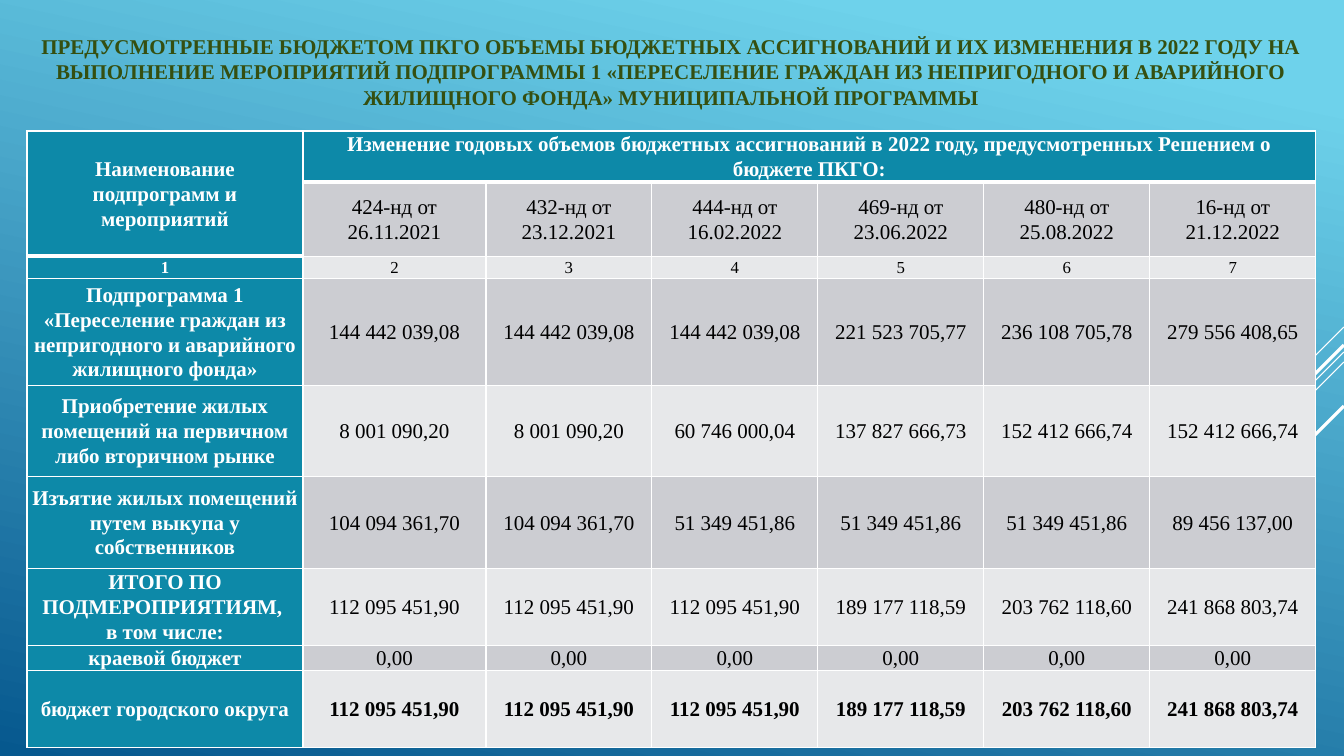
import pptx
import pptx.dml.color
import pptx.enum.shapes
import pptx.enum.text
import pptx.oxml
import pptx.oxml.ns
import pptx.util

PX = 914400 / 100.8
FONT = "Times New Roman"
HUES = {"sky": "6ED2EB", "deep": "06588E", "title": "354F10", "teal": "0D89A8",
        "dark": "CCCDD2", "pale": "E7E8EA", "white": "FFFFFF", "black": "000000"}
TITLE = ("ПРЕДУСМОТРЕННЫЕ БЮДЖЕТОМ ПКГО ОБЪЕМЫ БЮДЖЕТНЫХ АССИГНОВАНИЙ И ИХ ИЗМЕНЕНИЯ "
         "В 2022 ГОДУ НА ВЫПОЛНЕНИЕ МЕРОПРИЯТИЙ ПОДПРОГРАММЫ 1 «ПЕРЕСЕЛЕНИЕ ГРАЖДАН ИЗ "
         "НЕПРИГОДНОГО И АВАРИЙНОГО ЖИЛИЩНОГО ФОНДА» МУНИЦИПАЛЬНОЙ ПРОГРАММЫ")
HEAD = ["Наименование подпрограмм и мероприятий",
        "Изменение годовых объемов бюджетных ассигнований в 2022 году, "
        "предусмотренных Решением о бюджете ПКГО:"]
ACTS = ["424-нд от 26.11.2021", "432-нд от 23.12.2021", "444-нд от 16.02.2022",
        "469-нд от 23.06.2022", "480-нд от 25.08.2022", "16-нд от 21.12.2022"]
TOTALS = [112095451.90] * 3 + [189177118.59, 203762118.60, 241868803.74]
SUMS = [
    ("Подпрограмма 1 «Переселение граждан из непригодного и аварийного жилищного фонда»",
     [144442039.08] * 3 + [221523705.77, 236108705.78, 279556408.65]),
    ("Приобретение жилых помещений на первичном либо вторичном рынке",
     [8001090.20] * 2 + [60746000.04, 137827666.73] + [152412666.74] * 2),
    ("Изъятие жилых помещений путем выкупа у собственников",
     [104094361.70] * 2 + [51349451.86] * 3 + [89456137.00]),
    ("ИТОГО ПО ПОДМЕРОПРИЯТИЯМ, \nв том числе:", TOTALS),
    ("краевой бюджет", [0] * 6),
    ("бюджет городского округа", TOTALS),
]
COLS = [276, 183] + [166] * 5
ROWS = [51, 74, 22, 107, 91, 92, 77, 25, 77]
# Start height on the right edge, run to the left and down, width in points
RAYS = [(327, 101, 0.75), (352, 329, 0.75), (362, 209, 0.75),
        (345, 193, 2.25), (406, 140, 2.25)]


def px(num):
    return pptx.util.Emu(round(num * PX))


def rgb(name):
    return pptx.dml.color.RGBColor.from_string(HUES[name])


def money(num):
    """Group digits with no-break spaces and use a decimal comma."""
    return f"{num:,.2f}".replace(",", chr(160)).replace(".", ",")


def write(frame, text, hue, size=15, bold=True, gap=1.0):
    frame.text = text
    frame.word_wrap = True
    for para in frame.paragraphs:
        para.alignment = pptx.enum.text.PP_ALIGN.CENTER
        para.line_spacing = gap
        para.space_before = pptx.util.Pt(0)
        for run in para.runs:
            font = run.font
            font.name, font.size, font.bold = FONT, pptx.util.Pt(size), bold
            font.color.rgb = rgb(hue)


def paint(slide):
    fill = slide.background.fill
    fill.gradient()
    fill.gradient_angle = 258
    for stop, (spot, hue) in zip(fill.gradient_stops, [(0.1, "sky"), (1, "deep")]):
        stop.position = spot
        stop.color.rgb = rgb(hue)


def add_ray(slide, top, run, width):
    ray = slide.shapes.add_connector(pptx.enum.shapes.MSO_CONNECTOR.STRAIGHT,
                                     px(1344), px(top), px(1344 - run), px(top + run))
    ray.line.color.rgb = rgb("white")
    ray.line.width = pptx.util.Pt(width)
    props = ray._element.spPr
    props.append(props.makeelement(pptx.oxml.ns.qn("a:effectLst"), {}))


def add_title(slide):
    title = slide.shapes.title
    title.left, title.top, title.width, title.height = px(27), px(29), px(1288), px(85)
    write(title.text_frame, TITLE, "title")
    title.text_frame.auto_size = pptx.enum.text.MSO_AUTO_SIZE.NONE
    title.text_frame.vertical_anchor = pptx.enum.text.MSO_ANCHOR.MIDDLE


def edge(cell, row, col):
    """Draw white borders, heavy below the headings."""
    def heavy(line):
        return line == 0 or (line == 1 and col == 0)

    props = cell._tc.get_or_add_tcPr()
    wide = {"lnL": 1, "lnR": 1, "lnT": 3 if heavy(row - 1) else 1,
            "lnB": 3 if heavy(row) else 1}
    for spot, (tag, width) in enumerate(wide.items()):
        props.insert(spot, pptx.oxml.parse_xml(
            f'<a:{tag} {pptx.oxml.ns.nsdecls("a")} w="{width * 12700}"><a:solidFill>'
            f'<a:srgbClr val="{HUES["white"]}"/></a:solidFill></a:{tag}>'))


def add_grid(slide):
    data = [HEAD + [""] * 5, [""] + ACTS, [str(num + 1) for num in range(7)]]
    data += [[name] + [money(num) for num in nums] for name, nums in SUMS]
    grid = slide.shapes.add_table(len(ROWS), len(COLS), px(27), px(131),
                                  px(sum(COLS)), px(sum(ROWS))).table
    for col, width in zip(grid.columns, COLS):
        col.width = px(width)
    for row, high in zip(grid.rows, ROWS):
        row.height = px(high)
    grid.cell(0, 0).merge(grid.cell(1, 0))
    grid.cell(0, 1).merge(grid.cell(0, 6))
    for row, texts in enumerate(data):
        for col, text in enumerate(texts):
            cell = grid.cell(row, col)
            head = row == 0 or col == 0
            cell.fill.solid()
            cell.fill.fore_color.rgb = rgb("teal" if head else "dark" if row % 2 else "pale")
            cell.margin_left = cell.margin_right = px(2)
            cell.margin_top = cell.margin_bottom = 0
            cell.vertical_anchor = pptx.enum.text.MSO_ANCHOR.MIDDLE
            edge(cell, row, col)
            if text:
                write(cell.text_frame, text, "white" if head else "black",
                      12 if row == 2 else 15, head or row == len(ROWS) - 1, 1.07)


def main():
    deck = pptx.Presentation()
    deck.slide_width, deck.slide_height = px(1344), px(756)
    slide = deck.slides.add_slide(deck.slide_layouts[5])
    paint(slide)
    for ray in RAYS:
        add_ray(slide, *ray)
    add_title(slide)
    add_grid(slide)
    deck.save("out.pptx")


if __name__ == "__main__":
    main()
